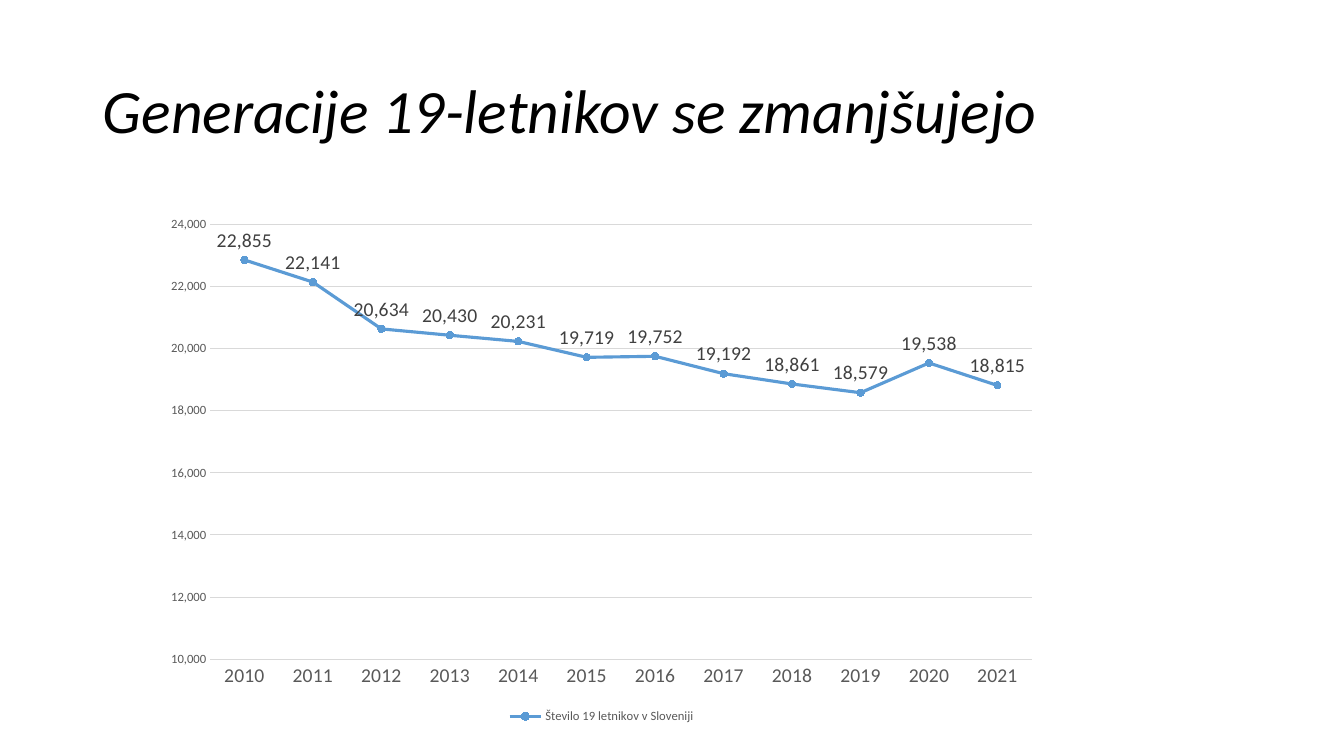
from pptx import Presentation
from pptx.chart.data import CategoryChartData
from pptx.dml.color import RGBColor
from pptx.enum.chart import XL_CHART_TYPE as ChartType
from pptx.enum.chart import XL_LABEL_POSITION as LabelPosition
from pptx.enum.chart import XL_LEGEND_POSITION as LegendPosition
from pptx.enum.chart import XL_MARKER_STYLE as MarkerStyle
from pptx.enum.chart import XL_TICK_MARK as TickMark
from pptx.enum.text import MSO_ANCHOR, PP_ALIGN
from pptx.util import Inches, Pt

TITLE = "Generacije 19-letnikov se zmanjšujejo"
SERIES_NAME = "Število 19 letnikov v Sloveniji"
FIRST_YEAR = 2010
POPULATION = [22855, 22141, 20634, 20430, 20231, 19719,
              19752, 19192, 18861, 18579, 19538, 18815]

FONT = "Calibri"
COLORS = {"title": "000000", "axis": "595959", "label": "404040",
          "grid": "D9D9D9", "series": "5B9BD5"}
SLIDE_SIZE = (13.33, 7.5)
TITLE_BOX = (0.92, 0.4, 11.5, 1.45)
CHART_BOX = (1.52, 2.05, 8.89, 5.17)


def color(name):
    return RGBColor.from_string(COLORS[name])


def set_font(font, size, color_name, **extra):
    for key, value in {"name": FONT, "size": Pt(size), **extra}.items():
        setattr(font, key, value)
    font.color.rgb = color(color_name)


def set_line(line, color_name, width):
    line.color.rgb = color(color_name)
    line.width = Pt(width)


def add_title(page):
    title = page.shapes.title
    for side, value in zip(("left", "top", "width", "height"), TITLE_BOX):
        setattr(title, side, Inches(value))
    frame = title.text_frame
    frame.text = TITLE
    frame.word_wrap = True
    frame.vertical_anchor = MSO_ANCHOR.MIDDLE
    para = frame.paragraphs[0]
    para.alignment = PP_ALIGN.LEFT
    para.line_spacing = 0.9
    set_font(para.runs[0].font, 44, "title", italic=True)


def format_axes(chart):
    years, counts = chart.category_axis, chart.value_axis
    for axis, size in ((years, 14), (counts, 9)):
        axis.major_tick_mark = axis.minor_tick_mark = TickMark.NONE
        set_font(axis.tick_labels.font, size, "axis")
    set_line(years.format.line, "grid", 0.75)
    counts.format.line.fill.background()
    counts.minimum_scale = 10000
    counts.has_major_gridlines = True
    set_line(counts.major_gridlines.format.line, "grid", 0.75)
    counts.tick_labels.number_format = "#,##0"
    counts.tick_labels.number_format_is_linked = False


def format_series(series):
    series.smooth = False
    set_line(series.format.line, "series", 2.25)
    marker = series.marker
    marker.style, marker.size = MarkerStyle.CIRCLE, 5
    marker.format.fill.solid()
    marker.format.fill.fore_color.rgb = color("series")
    set_line(marker.format.line, "series", 0.75)
    labels = series.data_labels
    formats = {"show_value": True, "position": LabelPosition.ABOVE,
               "number_format": "#,##0", "number_format_is_linked": False}
    for key, value in formats.items():
        setattr(labels, key, value)
    set_font(labels.font, 14, "label")


def add_population_chart(page):
    data = CategoryChartData(number_format="#,##0")
    data.categories = [str(FIRST_YEAR + i) for i in range(len(POPULATION))]
    data.add_series(SERIES_NAME, POPULATION)
    chart = page.shapes.add_chart(
        ChartType.LINE_MARKERS, *map(Inches, CHART_BOX), data).chart
    set_font(chart.font, 10, "title")
    chart.has_title = False
    chart.plots[0].vary_by_categories = False
    chart.has_legend = True
    chart.legend.position = LegendPosition.BOTTOM
    chart.legend.include_in_layout = False
    set_font(chart.legend.font, 9, "axis")
    format_axes(chart)
    format_series(chart.plots[0].series[0])


def main():
    deck = Presentation()
    deck.slide_width, deck.slide_height = map(Inches, SLIDE_SIZE)
    page = deck.slides.add_slide(deck.slide_layouts.get_by_name("Title Only"))
    add_title(page)
    add_population_chart(page)
    deck.save("out.pptx")


if __name__ == "__main__":
    main()
